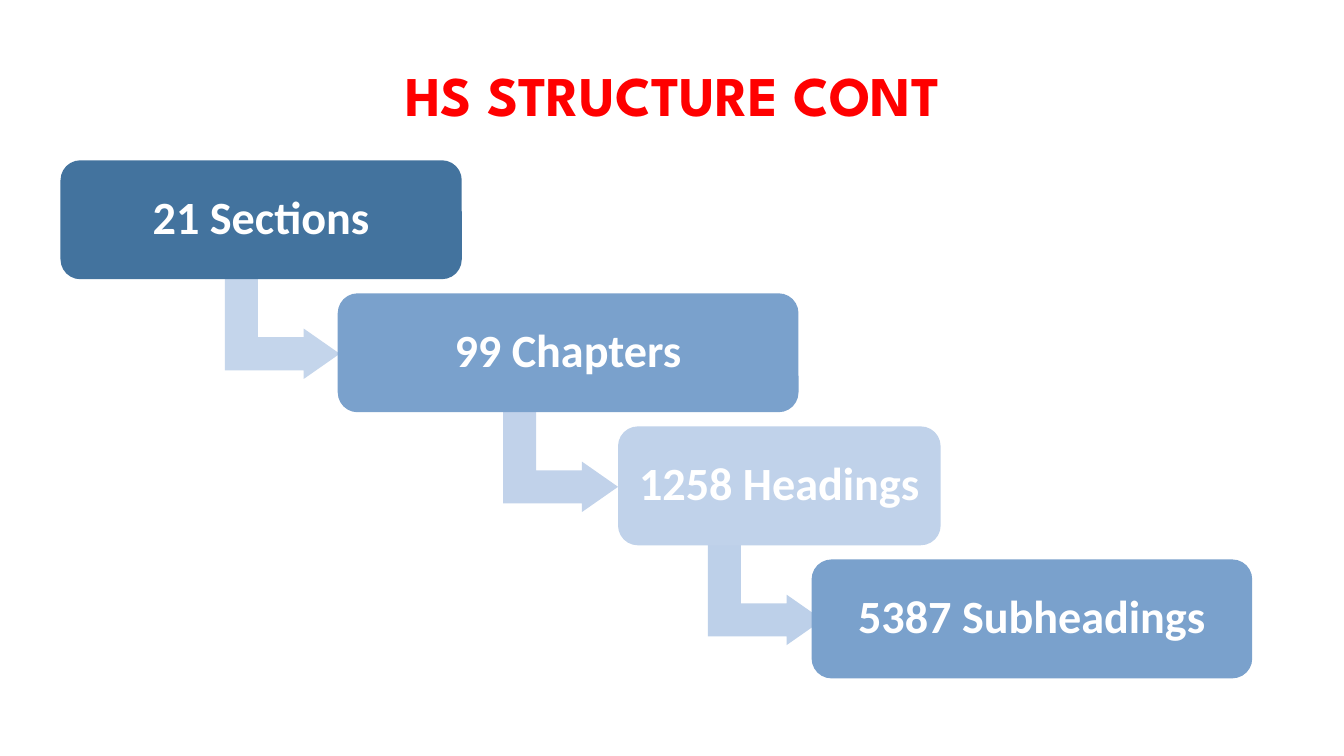
from dataclasses import dataclass
from typing import Optional

from pptx import Presentation
from pptx.dml.color import RGBColor
from pptx.enum.shapes import MSO_SHAPE as Preset
from pptx.enum.text import MSO_ANCHOR as Anchor, MSO_AUTO_SIZE as AutoSize, PP_ALIGN as Align
from pptx.util import Inches, Pt

COLOURS = {
    "title": "FF0000",
    "label": "FFFFFF",
    "dark": "43739E",
    "medium": "7AA1CC",
    "light": "C0D2EA",
    "first_arrow": "C4D5EB",
    "second_arrow": "C1D2EA",
    "third_arrow": "BDD0E9",
}
FIRST_TOP, ROW_STEP, BOX_HEIGHT = 1.59, 1.32, 1.18
ARROW_DROP, ARROW_WIDTH, ARROW_HEIGHT = 1.1, 1, 1.14


@dataclass
class Arrow:
    left: float
    colour: str


@dataclass
class Level:
    label: str
    left: float
    width: float
    colour: str
    arrow: Optional[Arrow] = None


LEVELS = [
    Level("21 Sections", 0.6, 3.98, "dark", Arrow(2.3, "first_arrow")),
    Level("99 Chapters", 3.35, 4.57, "medium", Arrow(5.06, "second_arrow")),
    Level("1258 Headings", 6.13, 3.2, "light", Arrow(7.09, "third_arrow")),
    Level("5387 Subheadings", 8.05, 4.37, "medium"),
]


def write_text(box, text: str, *, font: str, size: float, colour: str,
               wrap: bool = True) -> None:
    frame = box.text_frame
    frame.auto_size = AutoSize.NONE
    frame.word_wrap = wrap
    frame.vertical_anchor = Anchor.MIDDLE
    para = frame.paragraphs[0]
    para.alignment = Align.CENTER
    para.line_spacing = 0.9
    para.space_before = Pt(0)
    span = para.add_run()
    span.text = text
    span.font.name = font
    span.font.size = Pt(size)
    span.font.bold = True
    span.font.color.rgb = RGBColor.from_string(COLOURS[colour])


def add_filled(page, preset, left: float, top: float, width: float, height: float,
               colour: str, adjustments: list[float]):
    box = page.shapes.add_shape(preset, Inches(left), Inches(top), Inches(width), Inches(height))
    for index, value in enumerate(adjustments):
        box.adjustments[index] = value
    box.shadow.inherit = False
    box.fill.solid()
    box.fill.fore_color.rgb = RGBColor.from_string(COLOURS[colour])
    box.line.fill.background()
    return box


def add_level(page, level: Level, top: float) -> None:
    if level.arrow:
        arrow = add_filled(page, Preset.BENT_UP_ARROW, level.arrow.left, top + ARROW_DROP,
                           ARROW_WIDTH, ARROW_HEIGHT, level.arrow.colour, [0.328, 0.25, 0.358])
        arrow.rotation = 90
    box = add_filled(page, Preset.ROUNDED_RECTANGLE, level.left, top, level.width, BOX_HEIGHT,
                     level.colour, [0.167])
    write_text(box, level.label, font="Calibri", size=33, colour="label", wrap=False)


def main() -> None:
    deck = Presentation()
    deck.slide_width, deck.slide_height = Inches(13.33), Inches(7.5)
    page = deck.slides.add_slide(deck.slide_layouts[5])
    title = page.shapes.title
    title.left, title.top = Inches(0.92), Inches(0.4)
    title.width, title.height = Inches(11.5), Inches(1.16)
    write_text(title, "HS STRUCTURE CONT", font="League Spartan", size=40, colour="title")
    for row, level in enumerate(LEVELS):
        add_level(page, level, FIRST_TOP + row * ROW_STEP)
    deck.save("out.pptx")


if __name__ == "__main__":
    main()
